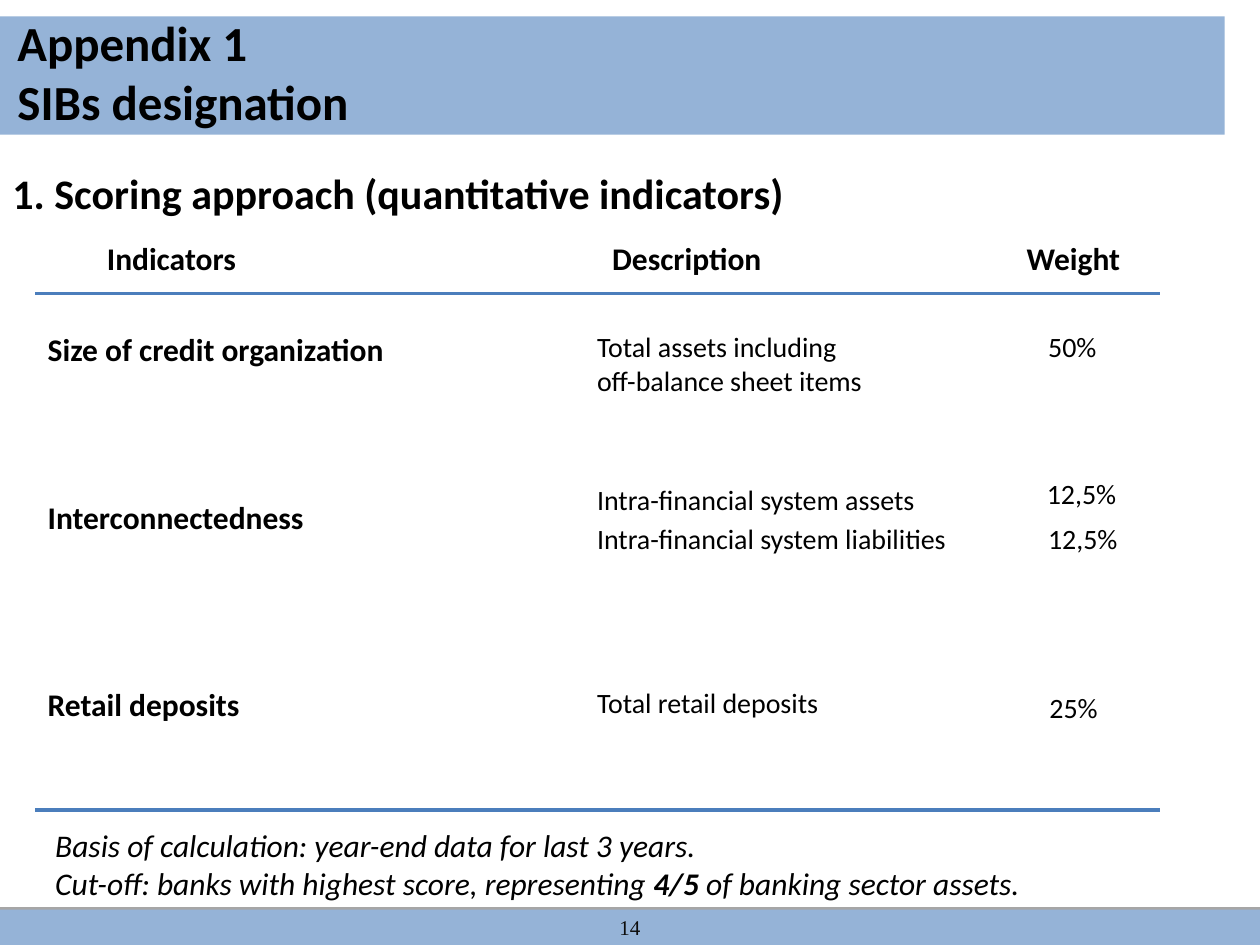
import pptx
import pptx.util
import pptx.dml.color
import pptx.enum.shapes
import pptx.enum.text
import pptx.oxml.ns
import lxml.etree
from pptx.util import Inches, Pt

COLORS = {"band": "95B3D7", "edge": "A6A6A6", "rule": "4B7EBC",
          "text": "000000", "number": "0D0D0D"}
FONT = "Calibri"

TITLE = ["Appendix 1", "SIBs designation"]
HEADING = ["1. Scoring approach (quantitative indicators)"]
HEADERS = [("Indicators", 0.75, 1.29), ("Description", 4.76, 1.4), ("Weight", 8.05, 0.95)]
INDICATORS = [("Size of credit organization", 2.57, 2.89, False),
              ("Interconnectedness", 3.9, 3.64, True),
              ("Retail deposits", 5.39, 3.64, True)]
DESCRIPTIONS = [(["Total assets including", "off-balance sheet items"], 2.57, 2.34, False),
                (["Intra-financial system assets"], 3.78, 3.23, True),
                (["Intra-financial system liabilities"], 4.09, 3.23, True),
                (["Total retail deposits"], 5.39, 3.15, True)]
WEIGHTS = [("50%", 8.22, 2.57, 0.59), ("12,5%", 8.21, 3.73, 0.76),
           ("12,5%", 8.22, 4.09, 0.76), ("25%", 8.23, 5.43, 0.59)]
NOTES = ["Basis of calculation: year-end data for last 3 years.",
         [("Cut-off: banks with highest score, representing ", False),
          ("4/5", True), (" of banking sector assets.", False)]]
PAGE_NUMBER = "14"
INDICATOR_X, DESCRIPTION_X = 0.28, 4.64
HEADER_Y = 1.85
RULE_X, RULE_YS = (0.28, 9.21), (2.33, 6.43)


def rgb(name):
    return pptx.dml.color.RGBColor.from_string(COLORS[name])


def add_band(slide, x, y, w, h, edge=None):
    sp = slide.shapes.add_shape(pptx.enum.shapes.MSO_SHAPE.RECTANGLE,
                                Inches(x), Inches(y), Inches(w), Inches(h))
    sp.shadow.inherit = False
    sp.fill.solid()
    sp.fill.fore_color.rgb = rgb("band")
    if edge:
        sp.line.color.rgb = rgb(edge)
        sp.line.width = Pt(2)
    else:
        sp.line.fill.background()
    return sp


def add_rule(slide, y):
    x1, x2 = RULE_X
    line = slide.shapes.add_connector(pptx.enum.shapes.MSO_CONNECTOR.STRAIGHT,
                                      Inches(x1), Inches(y), Inches(x2), Inches(y))
    line.line.color.rgb = rgb("rule")
    line.line.width = Pt(2)
    lxml.etree.SubElement(line._element.spPr, pptx.oxml.ns.qn("a:effectLst"))


def add_text(slide, lines, x, y, w, h, size, bold=False, italic=False, wrap=False):
    sp = slide.shapes.add_textbox(Inches(x), Inches(y), Inches(w), Inches(h))
    tf = sp.text_frame
    tf.word_wrap = wrap
    tf.auto_size = pptx.enum.text.MSO_AUTO_SIZE.SHAPE_TO_FIT_TEXT
    for i, line in enumerate(lines):
        p = tf.paragraphs[0] if i == 0 else tf.add_paragraph()
        p.font.name, p.font.size = FONT, Pt(size)
        p.font.bold, p.font.italic = bold, italic
        p.font.color.rgb = rgb("text")
        if isinstance(line, str):
            p.text = line
            continue
        for text, strong in line:
            r = p.add_run()
            r.text = text
            r.font.bold = strong


def add_page_number(slide):
    tf = add_band(slide, 0, 7.22, 10, 0.28).text_frame
    tf.vertical_anchor = pptx.enum.text.MSO_ANCHOR.MIDDLE
    p = tf.paragraphs[0]
    p.text = PAGE_NUMBER
    p.alignment = pptx.enum.text.PP_ALIGN.CENTER
    p.font.name, p.font.size = "Times New Roman", Pt(12)
    p.font.color.rgb = rgb("number")


def main():
    prs = pptx.Presentation()
    prs.slide_width, prs.slide_height = Inches(10), Inches(7.5)
    slide = prs.slides.add_slide(prs.slide_layouts[6])

    add_band(slide, 0, 0.13, 9.72, 0.94)
    add_text(slide, TITLE, 0.04, 0.05, 8.35, 1.04, 28, bold=True, wrap=True)
    add_band(slide, 0, 7.21, 10, 0.29, edge="edge")
    add_text(slide, HEADING, 0, 1.28, 6.39, 0.5, 24, bold=True)

    for y in RULE_YS:
        add_rule(slide, y)
    for text, x, w in HEADERS:
        add_text(slide, [text], x, HEADER_Y, w, 0.4, 18, bold=True)
    for text, y, w, wrap in INDICATORS:
        add_text(slide, [text], INDICATOR_X, y, w, 0.4, 18, bold=True, wrap=wrap)
    for lines, y, w, wrap in DESCRIPTIONS:
        add_text(slide, lines, DESCRIPTION_X, y, w, 0.1 + 0.27 * len(lines), 16, wrap=wrap)
    for text, x, y, w in WEIGHTS:
        add_text(slide, [text], x, y, w, 0.37, 16)

    add_text(slide, NOTES, 0.34, 6.51, 8.04, 0.71, 18, italic=True, wrap=True)
    add_page_number(slide)
    prs.save("out.pptx")


if __name__ == "__main__":
    main()
